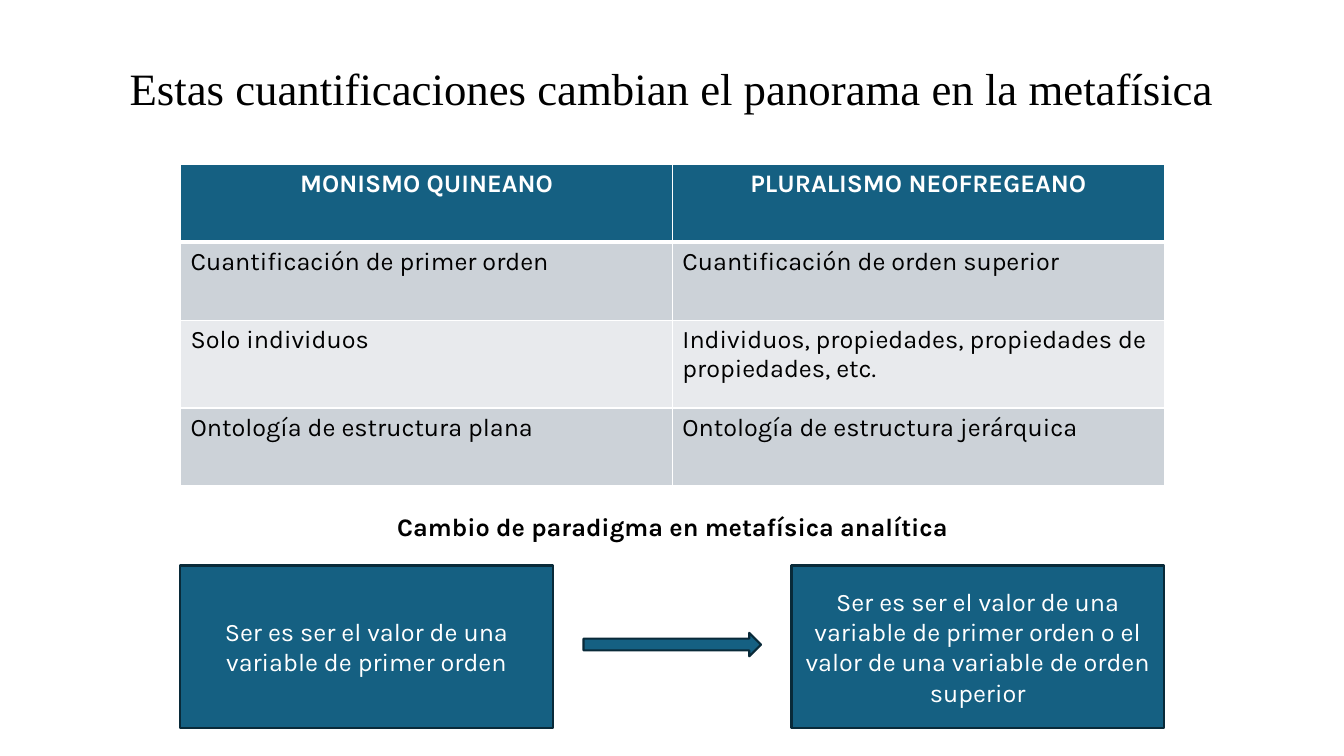
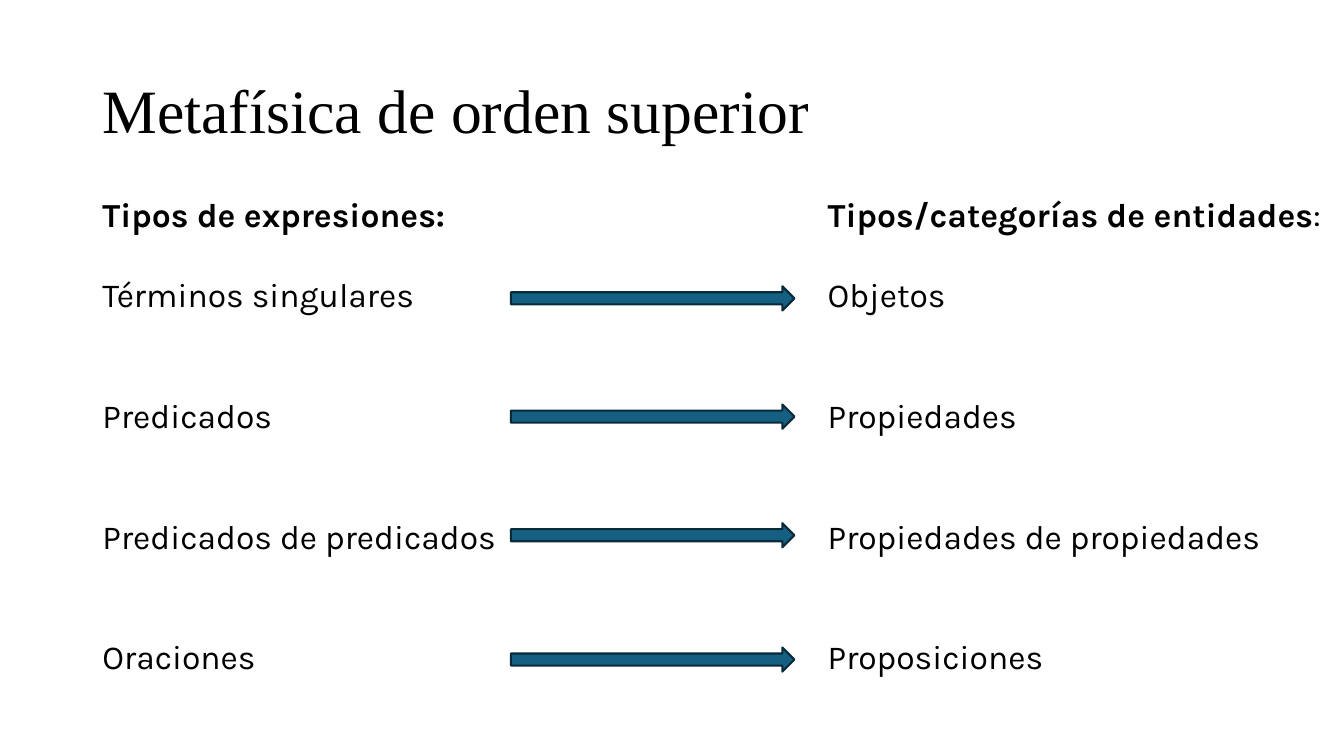
from lxml.etree import SubElement
from pptx import Presentation
from pptx.dml.color import RGBColor
from pptx.enum.shapes import MSO_SHAPE
from pptx.enum.text import MSO_ANCHOR, MSO_AUTO_SIZE, PP_ALIGN
from pptx.oxml.ns import qn
from pptx.util import Pt

HUES = {
    "ink": "000000",
    "paper": "FFFFFF",
    "teal": "156082",
    "edge": "092A39",
    "band": "CCD2D8",
    "pale": "E8EAED",
}
FRAME = {"word_wrap": True, "auto_size": MSO_AUTO_SIZE.NONE}
MIDDLE = {**FRAME, "vertical_anchor": MSO_ANCHOR.MIDDLE}
TOP = {**FRAME, "vertical_anchor": MSO_ANCHOR.TOP}
CENTER = {"alignment": PP_ALIGN.CENTER}
LEFT = {"alignment": PP_ALIGN.LEFT}
SIDES = {"lnL": 1, "lnR": 1, "lnT": 1, "lnB": 1}


def hue(name):
    return RGBColor.from_string(HUES[name])


def dress(item, values):
    for name, value in values.items():
        setattr(item, name, value)


class Deck:
    def __init__(self):
        self.show = Presentation()
        dress(self.show, {"slide_width": Pt(960), "slide_height": Pt(540)})
        self.slide = None

    def begin(self, layout):
        self.slide = self.show.slides.add_slide(self.show.slide_layouts[layout])

    def place(self, shape, box):
        dress(shape, dict(zip(("left", "top", "width", "height"), map(Pt, box))))

    def phrase(self, para, text, size, color="ink", bold=False, face="Karla"):
        run = para.add_run()
        run.text = text
        dress(run.font, {"name": face, "size": Pt(size), "bold": bold})
        run.font.color.rgb = hue(color)

    def title(self, text, box, size, align):
        shape = self.slide.shapes.title
        self.place(shape, box)
        dress(shape.text_frame, MIDDLE)
        para = shape.text_frame.paragraphs[0]
        dress(para, {**align, "line_spacing": 0.9})
        self.phrase(para, text, size, face="Times New Roman")

    def column(self, slot, box, head, items):
        shape = self.slide.placeholders[slot]
        self.place(shape, box)
        frame = shape.text_frame
        dress(frame, TOP)
        for index, runs in enumerate([head] + [[(item, False)] for item in items]):
            para = frame.add_paragraph() if index else frame.paragraphs[0]
            gap = (0, 28.7)[index] if index < 2 else 57.5
            dress(para, {**LEFT, "space_before": Pt(gap), "line_spacing": 1.0})
            props = para._p.get_or_add_pPr()
            for name in ("marL", "indent"):
                props.set(name, "0")
            SubElement(props, qn("a:buNone"))
            for text, bold in runs:
                self.phrase(para, text, 24, bold=bold)

    def label(self, text, box):
        frame = self.slide.shapes.add_textbox(*map(Pt, box)).text_frame
        dress(frame, TOP)
        dress(frame.paragraphs[0], CENTER)
        self.phrase(frame.paragraphs[0], text, 18, bold=True)

    def block(self, kind, box, text=""):
        shape = self.slide.shapes.add_shape(kind, *map(Pt, box))
        shape.shadow.inherit = False
        shape.fill.solid()
        shape.fill.fore_color.rgb = hue("teal")
        shape.line.color.rgb = hue("edge")
        shape.line.width = Pt(1.5)
        if text:
            dress(shape.text_frame, MIDDLE)
            dress(shape.text_frame.paragraphs[0], CENTER)
            self.phrase(shape.text_frame.paragraphs[0], text, 18, "paper")

    def arrow(self, box):
        self.block(MSO_SHAPE.RIGHT_ARROW, box)

    def border(self, cell, sides):
        props = cell._tc.get_or_add_tcPr()
        for side, width in sides.items():
            line = SubElement(props, qn("a:" + side), w=str(Pt(width)))
            fill = SubElement(line, qn("a:solidFill"))
            SubElement(fill, qn("a:srgbClr"), val=HUES["paper"])

    def table(self, rows, box, heights):
        size = len(rows), len(rows[0])
        grid = self.slide.shapes.add_table(*size, *map(Pt, box)).table
        for r, (row, height) in enumerate(zip(rows, heights)):
            grid.rows[r].height = Pt(height)
            head = r == 0
            back = "teal" if head else ("pale", "band")[r % 2]
            for c, text in enumerate(row):
                cell = grid.cell(r, c)
                sides = {**SIDES, "lnB": 3} if head else SIDES
                self.border(cell, {**sides, "lnT": 3} if r == 1 else sides)
                cell.fill.solid()
                cell.fill.fore_color.rgb = hue(back)
                para = cell.text_frame.paragraphs[0]
                dress(para, CENTER if head else LEFT)
                self.phrase(para, text, 18, "paper" if head else "ink", head)


def main():
    deck = Deck()

    deck.begin(5)
    deck.title("Estas cuantificaciones cambian el panorama en la metafísica",
               (66, 13, 828, 104.4), 32, CENTER)
    deck.table([
        ("MONISMO QUINEANO", "PLURALISMO NEOFREGEANO"),
        ("Cuantificación de primer orden", "Cuantificación de orden superior"),
        ("Solo individuos", "Individuos, propiedades, propiedades de propiedades, etc."),
        ("Ontología de estructura plana", "Ontología de estructura jerárquica"),
    ], (129, 117.5, 702.6, 230), (55.6, 55.6, 62.8, 55.6))
    deck.label("Cambio de paradigma en metafísica analítica", (230.4, 361.5, 500, 29))
    for left, text in (
        (128.8, "Ser es ser el valor de una variable de primer orden"),
        (565.4, "Ser es ser el valor de una variable de primer orden "
                "o el valor de una variable de orden superior"),
    ):
        deck.block(MSO_SHAPE.RECTANGLE, (left, 404, 266, 116), text)
    deck.arrow((416.8, 452, 126.8, 16.8))

    deck.begin(3)
    deck.title("Metafísica de orden superior", (66, 28.8, 828, 104.4), 44, LEFT)
    deck.column(1, (66, 134.6, 367, 361.5), [("Tipos de expresiones:", True)],
                ["Términos singulares", "Predicados", "Predicados de predicados", "Oraciones"])
    deck.column(2, (584, 134.6, 376, 361.5),
                [("Tipos/categorías de entidades", True), (":", False)],
                ["Objetos", "Propiedades", "Propiedades de propiedades", "Proposiciones"])
    for top in (204.5, 289, 373.7, 462.5):
        deck.arrow((365, top, 202.5, 17.3))

    deck.show.save("out.pptx")


if __name__ == "__main__":
    main()
